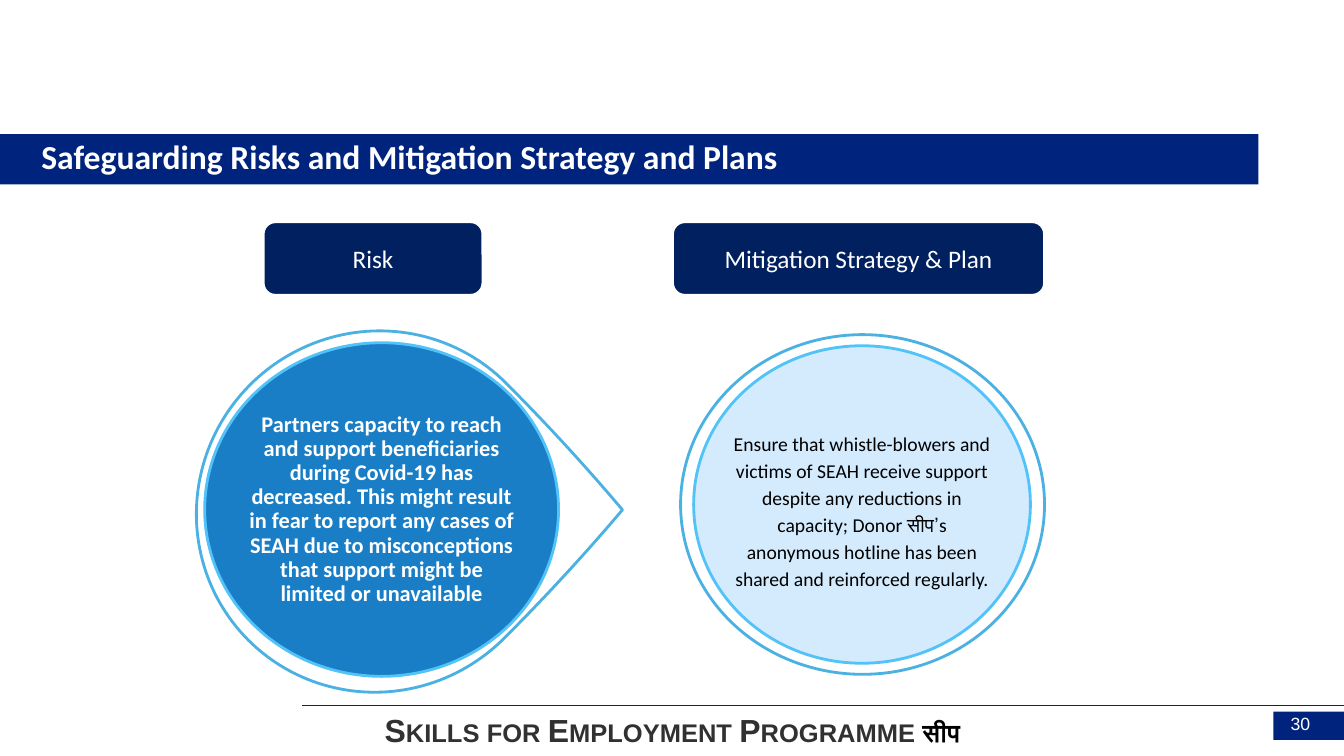
from lxml import etree
from pptx import Presentation
from pptx.dml.color import RGBColor
from pptx.enum.shapes import MSO_CONNECTOR, MSO_SHAPE
from pptx.enum.text import MSO_ANCHOR, PP_ALIGN
from pptx.oxml.ns import qn
from pptx.util import Emu, Pt

PX = 9144
RECT, ROUND = MSO_SHAPE.RECTANGLE, MSO_SHAPE.ROUNDED_RECTANGLE
OVAL, TEAR = MSO_SHAPE.OVAL, MSO_SHAPE.TEAR
LINE = MSO_CONNECTOR.STRAIGHT
TOP, MID, LOW = MSO_ANCHOR.TOP, MSO_ANCHOR.MIDDLE, MSO_ANCHOR.BOTTOM
LEFT, MIDST = PP_ALIGN.LEFT, PP_ALIGN.CENTER
HUES = {
    "band": "00247D", "head": "002060", "white": "FFFFFF", "black": "000000",
    "ring": "4AB1E2", "edge": "51C3F9", "risk": "0070C0", "plan": "D0E9FD",
    "foot": "323132",
}
RISK = ("Partners capacity to reach and support beneficiaries during Covid-19 has "
        "decreased. This might result in fear to report any cases of SEAH due to "
        "misconceptions that support might be limited or unavailable")
PLAN = ("Ensure that whistle-blowers and victims of SEAH receive support despite any "
        "reductions in capacity; Donor सीप’s anonymous hotline has been shared and "
        "reinforced regularly.")


def px(*nums):
    """Turn px lengths into EMU."""
    return [Emu(num * PX) for num in nums]


def hue(name):
    """Look up a colour by name."""
    return RGBColor.from_string(HUES[name])


def shape(slide, kind, box, fill, edge=None, alpha=None):
    """Add a filled shape, with an outline and see-through fill if asked."""
    item = slide.shapes.add_shape(kind, *px(*box))
    item.shadow.inherit = False
    item.fill.solid()
    item.fill.fore_color.rgb = hue(fill)
    if alpha:
        tone = item.fill._xPr.find(qn("a:solidFill"))[0]
        etree.SubElement(tone, qn("a:alpha")).set("val", str(alpha * 1000))
    if edge:
        item.line.color.rgb = hue(edge)
        item.line.width = Pt(2)
    else:
        item.line.fill.background()
    return item


def style(font, size, color, bold=False, face="Calibri"):
    """Set the look of a font."""
    font.name, font.size, font.bold = face, Pt(size), bold
    font.color.rgb = hue(color)


def frame(item, anchor, align, pad):
    """Prepare a text frame and return its first paragraph."""
    body = item.text_frame
    body.word_wrap = True
    body.vertical_anchor = anchor
    body.margin_left, body.margin_top, body.margin_right, body.margin_bottom = px(*pad, *pad)
    para = body.paragraphs[0]
    para.alignment = align
    return para


def label(slide, box, text, size, color, anchor=MID, align=MIDST, pad=(2, 2),
          bold=False, face="Calibri", pitch=1.0):
    """Add a text box holding one paragraph."""
    para = frame(slide.shapes.add_textbox(*px(*box)), anchor, align, pad)
    para.text = text
    para.line_spacing = pitch
    style(para.font, size, color, bold, face)


def footer(slide, x, y, w, h):
    """Draw the rule, programme name and page number."""
    rule = slide.shapes.add_connector(LINE, *px(x, y, x + w, y))
    rule.line.color.rgb = hue("band")
    rule.line.width = Pt(0.75)
    etree.SubElement(rule._element.spPr, qn("a:effectLst"))
    shape(slide, RECT, (x + w - 70, y + 6, 70, 28), "band")
    label(slide, (x + w - 66, y, 66, 34), "30", 12.6, "white", TOP, LEFT,
          (13, 7), face="Arial")
    name = slide.shapes.add_textbox(*px(x - 18, y + 2, 770, h - 2))
    para = frame(name, LOW, MIDST, (13, 7))
    for text, size, color, cap in (
            ("Skills for Employment Programme ", 22.8, "foot", "small"),
            ("सीप", 18.1, "black", "none")):
        run = para.add_run()
        run.text = text
        style(run.font, size, color, True, "Arial")
        run._r.get_or_add_rPr().set("cap", cap)


def title(slide, x, y, w, h):
    """Draw the title band with its heading."""
    shape(slide, RECT, (x, y, w, h), "band")
    label(slide, (x + 30, y - 7, w - 66, h + 5),
          "Safeguarding Risks and Mitigation Strategy and Plans", 24, "white",
          LOW, LEFT, (11, 6), True)


def header(slide, x, y, w, h, text):
    """Draw a rounded column header."""
    item = shape(slide, ROUND, (x, y, w, h), "head", "white")
    para = frame(item, MID, MIDST, (10, 5))
    para.text = text
    style(para.font, 18, "white")


def plan(slide, x, y, w, h):
    """Draw the mitigation circle inside its ring."""
    shape(slide, OVAL, (x, y, w, h), "white", "ring")
    shape(slide, OVAL, (x + 13, y + 11, w - 27, h - 22), "plan", "edge", 90)
    label(slide, (x + 46, y + 78, w - 93, h - 146), PLAN, 14, "black", pitch=1.15)


def risk(slide, x, y, w, h):
    """Draw the risk circle inside a teardrop that points right."""
    drop = shape(slide, TEAR, (x, y, w, h), "white", "ring")
    drop.rotation = 45
    drop.adjustments[0] = 0.96
    disc = (x + 7, y + 13, w - 5, h - 30)
    shape(slide, OVAL, disc, "risk", "edge", 90)
    label(slide, (disc[0] + 43, disc[1] + 43, disc[2] - 86, disc[3] - 86), RISK,
          16, "white", pad=(0, 0), bold=True, pitch=0.9)


def main():
    """Build the slide and save it."""
    deck = Presentation()
    deck.slide_width, deck.slide_height = px(1333, 750)
    slide = deck.slides.add_slide(deck.slide_layouts[6])
    footer(slide, 300, 700, 1033, 50)
    title(slide, 0, 133, 1248, 50)
    header(slide, 261, 220, 218, 73, "Risk")
    header(slide, 667, 220, 369, 73, "Mitigation Strategy & Plan")
    plan(slide, 675, 332, 361, 337)
    risk(slide, 196, 327, 356, 361)
    deck.save("out.pptx")


if __name__ == "__main__":
    main()
